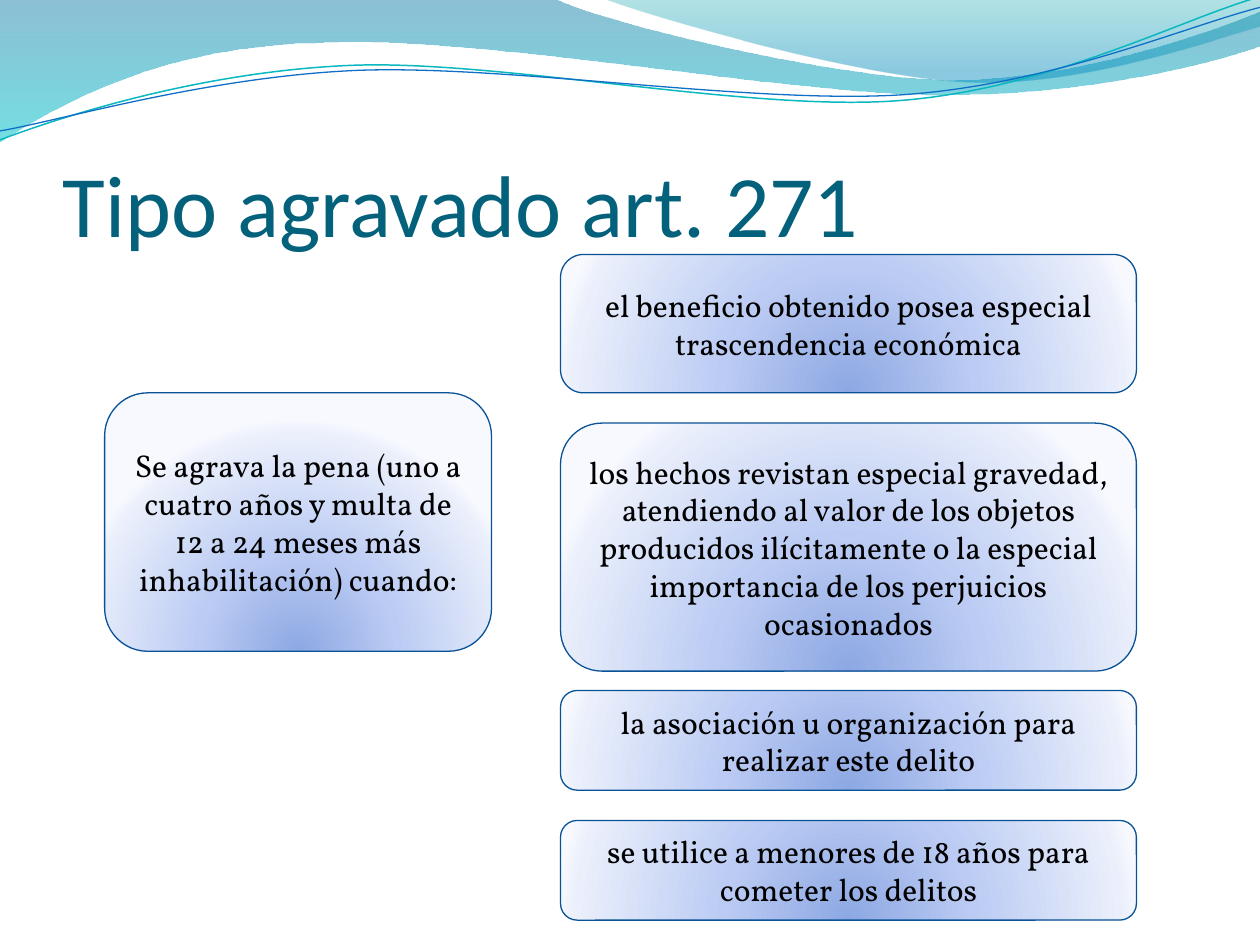
import pptx
import pptx.dml.color
import pptx.enum.shapes
import pptx.enum.text
import pptx.oxml
import pptx.oxml.ns
import pptx.util
from dataclasses import dataclass

Cm = pptx.util.Cm
qn = pptx.oxml.ns.qn
ANCHOR = pptx.enum.text.MSO_ANCHOR
ALIGN = pptx.enum.text.PP_ALIGN


@dataclass(frozen=True)
class Theme:
    title_font: str = "Calibri"
    body_font: str = "Vollkorn"
    title_size: int = 50
    body_size: int = 18
    title: str = "04617B"
    text: str = "000000"
    outline: str = "095295"
    teal: str = "0AB8BF"
    blue: str = "0F6FC6"
    # Gradient stops: position %, colour, opacity %
    band: tuple = ((0, "0074A1", 45), (100, "00C6CF", 55))
    crest: tuple = ((0, "00A1A9", 30), (80, "008BBF", 45))
    card: tuple = ((0, "8DA8E3", 100), (43, "BBCBF3", 100),
                   (93, "EAEFFB", 100), (100, "F7F9FF", 100))


T = Theme()
DOWN = '<a:lin ang="5400000" scaled="0"/>'
FROM_BELOW = ('<a:path path="circle"><a:fillToRect l="50000" t="130000" '
              'r="50000" b="-30000"/></a:path>')

# Header curves in cm: start point, then line (2 numbers) or Bézier (6 numbers) segments
BAND = [(0, -0.03), (11.18, -0.03),
        (12.09, 0.43, 16.87, 1.6, 19.25, 1.6), (21.67, 1.6, 24.33, 0.66, 25.4, 0.23),
        (25.43, 0.91), (24.97, 1.12, 22.1, 1.93, 18.95, 1.91),
        (15.8, 1.91, 9.7, 0.71, 6.53, 0.86), (3.28, 0.89, 1.17, 2.11, -0.03, 2.87)]
CREST = [(12.17, -0.03), (12.93, 0.28, 17.32, 1.57, 19.53, 1.65),
         (21.74, 1.75, 24.41, 0.81, 25.4, 0.53), (25.4, 0)]
TEAL_LINE = [(0, 2.82), (1.22, 2.36, 4.01, 1.45, 7.04, 1.32),
             (10.03, 1.19, 15.06, 2.26, 18.11, 2.03),
             (21.16, 1.8, 23.83, 0.38, 25.35, -0.05)]
BLUE_LINE = [(0, 2.64), (1.19, 2.44, 4.17, 1.55, 7.19, 1.42),
             (10.24, 1.3, 15.16, 2.11, 18.21, 1.91),
             (21.23, 1.7, 23.9, 0.53, 25.4, 0.15)]

PENALTY = ("Se agrava la pena (uno a cuatro años y multa de 12 a 24 meses más "
           "inhabilitación) cuando:")
# Top within the column, height, text
CASES = [
    (0, 2.79, "el beneficio obtenido posea especial trascendencia económica"),
    (3.4, 5, "los hechos revistan especial gravedad, atendiendo al valor de los objetos "
             "producidos ilícitamente o la especial importancia de los perjuicios ocasionados"),
    (8.79, 2.01, "la asociación u organización para realizar este delito"),
    (11.41, 2.01, "se utilice a menores de 18 años para cometer los delitos"),
]


def rgb(value):
    return pptx.dml.color.RGBColor.from_string(value)


def set_text(tf, text, font, size, color, align=ALIGN.LEFT, anchor=ANCHOR.MIDDLE):
    tf.word_wrap = True
    tf.vertical_anchor = anchor
    p = tf.paragraphs[0]
    p.alignment = align
    r = p.add_run()
    r.text = text
    r.font.name = font
    r.font.size = pptx.util.Pt(size)
    r.font.color.rgb = rgb(color)


def set_gradient(sp, stops, direction):
    sp.fill.background()
    spPr = sp._element.spPr
    gs = "".join(
        f'<a:gs pos="{pos * 1000}"><a:srgbClr val="{color}">'
        f'<a:alpha val="{alpha * 1000}"/></a:srgbClr></a:gs>'
        for pos, color, alpha in stops)
    grad = pptx.oxml.parse_xml(
        f'<a:gradFill {pptx.oxml.ns.nsdecls("a")} rotWithShape="1">'
        f'<a:gsLst>{gs}</a:gsLst>{direction}</a:gradFill>')
    spPr.replace(spPr.find(qn("a:noFill")), grad)


def set_line(sp, color, width):
    sp.line.color.rgb = rgb(color)
    sp.line.width = pptx.util.Pt(width)


def add_curve(s, x, y, segments, close):
    """Build a freeform on all control points, then group each Bézier's three."""
    points = [(round(seg[i] * 100), round(seg[i + 1] * 100))
              for seg in segments for i in range(0, len(seg), 2)]
    builder = s.shapes.build_freeform(*points[0], scale=Cm(0.01))
    builder.add_line_segments(points[1:], close=close)
    sp = builder.convert_to_shape(Cm(x), Cm(y))
    sp.shadow.inherit = False
    path = sp._element.spPr.find(".//" + qn("a:path"))
    nodes = iter(path.findall(qn("a:lnTo")))
    for seg in segments[1:]:
        group = [next(nodes) for _ in range(len(seg) // 2)]
        if len(group) == 3:
            bezier = path.makeelement(qn("a:cubicBezTo"), {})
            group[0].addprevious(bezier)
            for node in group:
                bezier.append(node[0])
                path.remove(node)
    return sp


def add_header(s, x, y):
    for segments, stops in ((BAND, T.band), (CREST, T.crest)):
        sp = add_curve(s, x, y, segments, close=True)
        set_gradient(sp, stops, DOWN)
        sp.line.fill.background()
    for segments, color, width in ((TEAL_LINE, T.teal, 0.85), (BLUE_LINE, T.blue, 0.75)):
        sp = add_curve(s, x, y, segments, close=False)
        sp.fill.background()
        set_line(sp, color, width)


def add_title(s, x, y, w, h, text):
    tf = s.shapes.add_textbox(Cm(x), Cm(y), Cm(w), Cm(h)).text_frame
    tf.margin_left = tf.margin_right = tf.margin_bottom = 0
    set_text(tf, text, T.title_font, T.title_size, T.title, anchor=ANCHOR.BOTTOM)


def add_card(s, x, y, w, h, text):
    sp = s.shapes.add_shape(pptx.enum.shapes.MSO_SHAPE.ROUNDED_RECTANGLE,
                            Cm(x), Cm(y), Cm(w), Cm(h))
    sp.shadow.inherit = False
    set_gradient(sp, T.card, FROM_BELOW)
    set_line(sp, T.outline, 0.75)
    set_text(sp.text_frame, text, T.body_font, T.body_size, T.text, align=ALIGN.CENTER)


def add_cases(s, x, y, w):
    for top, h, text in CASES:
        add_card(s, x, y + top, w, h, text)


def main():
    prs = pptx.Presentation()
    prs.slide_width, prs.slide_height = Cm(25.4), Cm(19.05)
    s = prs.slides.add_slide(prs.slide_layouts[6])
    add_header(s, 0, 0)
    add_title(s, 1.27, 1.96, 23.06, 3.18, "Tipo agravado art. 271")
    add_card(s, 2.11, 7.92, 7.8, 5.21, PENALTY)
    add_cases(s, 11.3, 5.13, 11.61)
    prs.save("out.pptx")


if __name__ == "__main__":
    main()
